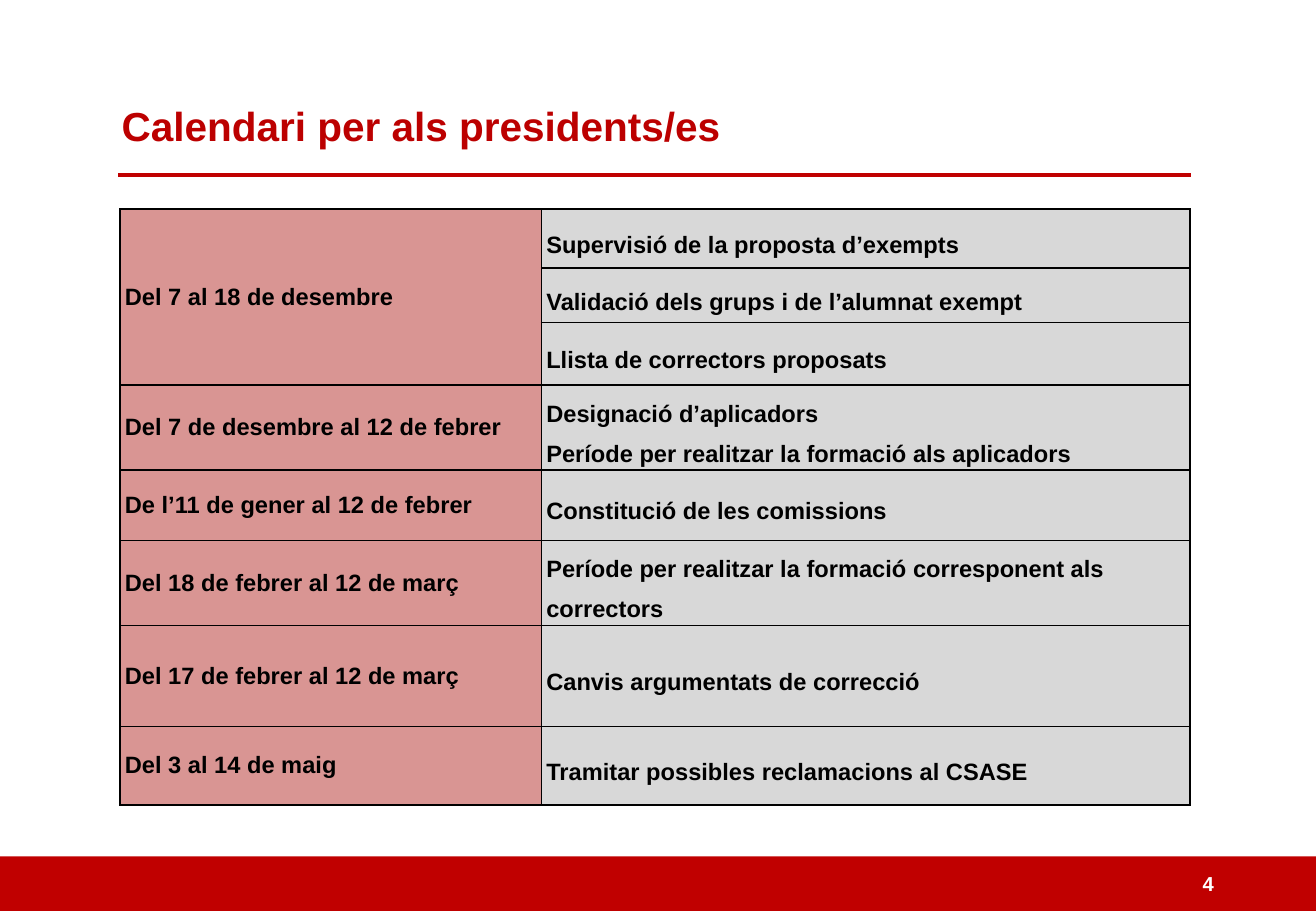
from dataclasses import dataclass

from lxml.etree import SubElement
from pptx import Presentation
from pptx.dml.color import RGBColor as Rgb
from pptx.enum.shapes import MSO_CONNECTOR as Link, MSO_SHAPE as Shape
from pptx.enum.text import MSO_ANCHOR as Anchor, MSO_AUTO_SIZE as Fit, PP_ALIGN as Align
from pptx.oxml.ns import qn
from pptx.util import Cm, Pt


@dataclass(frozen=True)
class Theme:
    font: str = "Arial"
    red: str = "C00000"
    title: str = "BC0000"
    pink: str = "D99593"
    grey: str = "D8D8D8"
    black: str = "000000"
    white: str = "FFFFFF"
    head: int = 24
    body: int = 14
    small: int = 12


@dataclass(frozen=True)
class Box:
    x: float
    y: float
    w: float
    h: float

    def place(self):
        return Cm(self.x), Cm(self.y), Cm(self.w), Cm(self.h)


THEME = Theme()
WIDE, HIGH = 27.51, 19.05

# Dates, tasks and row height in cm; a row without dates joins the one above
PLAN = [
    ("Del 7 al 18 de desembre", ["Supervisió de la proposta d’exempts"], 1.23),
    (None, ["Validació dels grups i de l’alumnat exempt"], 1.15),
    (None, ["Llista de correctors proposats"], 1.3),
    ("Del 7 de desembre al 12 de febrer",
     ["Designació d’aplicadors",
      "Període per realitzar la formació als aplicadors"], 1.68),
    ("De l’11 de gener al 12 de febrer", ["Constitució de les comissions"], 1.47),
    ("Del 18 de febrer al 12 de març",
     ["Període per realitzar la formació corresponent als correctors"], 1.73),
    ("Del 17 de febrer al 12 de març", ["Canvis argumentats de correcció"], 2.11),
    ("Del 3 al 14 de maig", ["Tramitar possibles reclamacions al CSASE"], 1.65),
]


def write(frame, lines, size, color, gap=None):
    for i, line in enumerate(lines):
        para = frame.add_paragraph() if i else frame.paragraphs[0]
        para.alignment = Align.LEFT
        if gap:
            para.line_spacing = gap
        run = para.add_run()
        run.text = line
        font = run.font
        font.name, font.size, font.bold = THEME.font, Pt(size), True
        font.color.rgb = Rgb.from_string(color)


def add_head(slide, box):
    # Title
    title = slide.shapes.title
    title.left, title.top, title.width, title.height = box.place()
    frame = title.text_frame
    frame.auto_size = Fit.NONE
    frame.vertical_anchor = Anchor.TOP
    write(frame, ["Calendari per als presidents/es"], THEME.head, THEME.title)

    # Rule below the title
    left, y = box.x + 0.18, box.y + 1.68
    rule = slide.shapes.add_connector(
        Link.STRAIGHT, Cm(left), Cm(y), Cm(left + 22.42), Cm(y))
    rule.line.color.rgb = Rgb.from_string(THEME.red)
    rule.line.width = Pt(2.25)
    SubElement(rule._element.spPr, qn("a:effectLst"))


def add_foot(slide, box, page):
    # Red band
    band = slide.shapes.add_shape(Shape.RECTANGLE, *box.place())
    band.shadow.inherit = False
    band.fill.solid()
    band.fill.fore_color.rgb = Rgb.from_string(THEME.red)
    band.line.fill.background()

    # Page number
    spot = Box(box.x + 24.89, box.y + 0.15, 2.31, 0.84)
    frame = slide.shapes.add_textbox(*spot.place()).text_frame
    frame.word_wrap = True
    frame.vertical_anchor = Anchor.MIDDLE
    write(frame, [page], THEME.small, THEME.white)


def style(cell, color):
    cell.vertical_anchor = Anchor.MIDDLE
    cell.margin_left = cell.margin_right = Cm(0.1)
    cell.margin_top = cell.margin_bottom = 0
    props = cell._tc.get_or_add_tcPr()
    for side in ("lnL", "lnR", "lnT", "lnB"):
        edge = SubElement(props, qn(f"a:{side}"), w=str(Pt(1)))
        paint = SubElement(edge, qn("a:solidFill"))
        SubElement(paint, qn("a:srgbClr"), val=THEME.black)
    cell.fill.solid()
    cell.fill.fore_color.rgb = Rgb.from_string(color)


def add_plan(slide, box):
    grid = slide.shapes.add_table(len(PLAN), 2, *box.place()).table
    grid.first_row = grid.horz_banding = False
    dates = 8.81
    for col, width in zip(grid.columns, (dates, box.w - dates)):
        col.width = Cm(width)

    # Fill the rows
    start = 0
    for i, (when, tasks, height) in enumerate(PLAN):
        grid.rows[i].height = Cm(height)
        left, right = grid.cell(i, 0), grid.cell(i, 1)
        style(left, THEME.pink)
        style(right, THEME.grey)
        write(right.text_frame, tasks, THEME.body, THEME.black, 1.5)
        if when:
            start = i
            write(left.text_frame, [when], THEME.body, THEME.black)
        # Join the dates once their last row is reached
        last = i + 1 == len(PLAN) or PLAN[i + 1][0]
        if last and i > start:
            grid.cell(start, 0).merge(left)


def main():
    deck = Presentation()
    deck.slide_width, deck.slide_height = Cm(WIDE), Cm(HIGH)
    slide = deck.slides.add_slide(deck.slide_layouts[5])
    add_foot(slide, Box(0, 17.91, WIDE, HIGH - 17.91), "4")
    add_head(slide, Box(2.29, 1.98, 15.16, 1.55))
    add_plan(slide, Box(2.51, 4.37, 22.37, sum(row[2] for row in PLAN)))
    deck.save("out.pptx")


if __name__ == "__main__":
    main()
